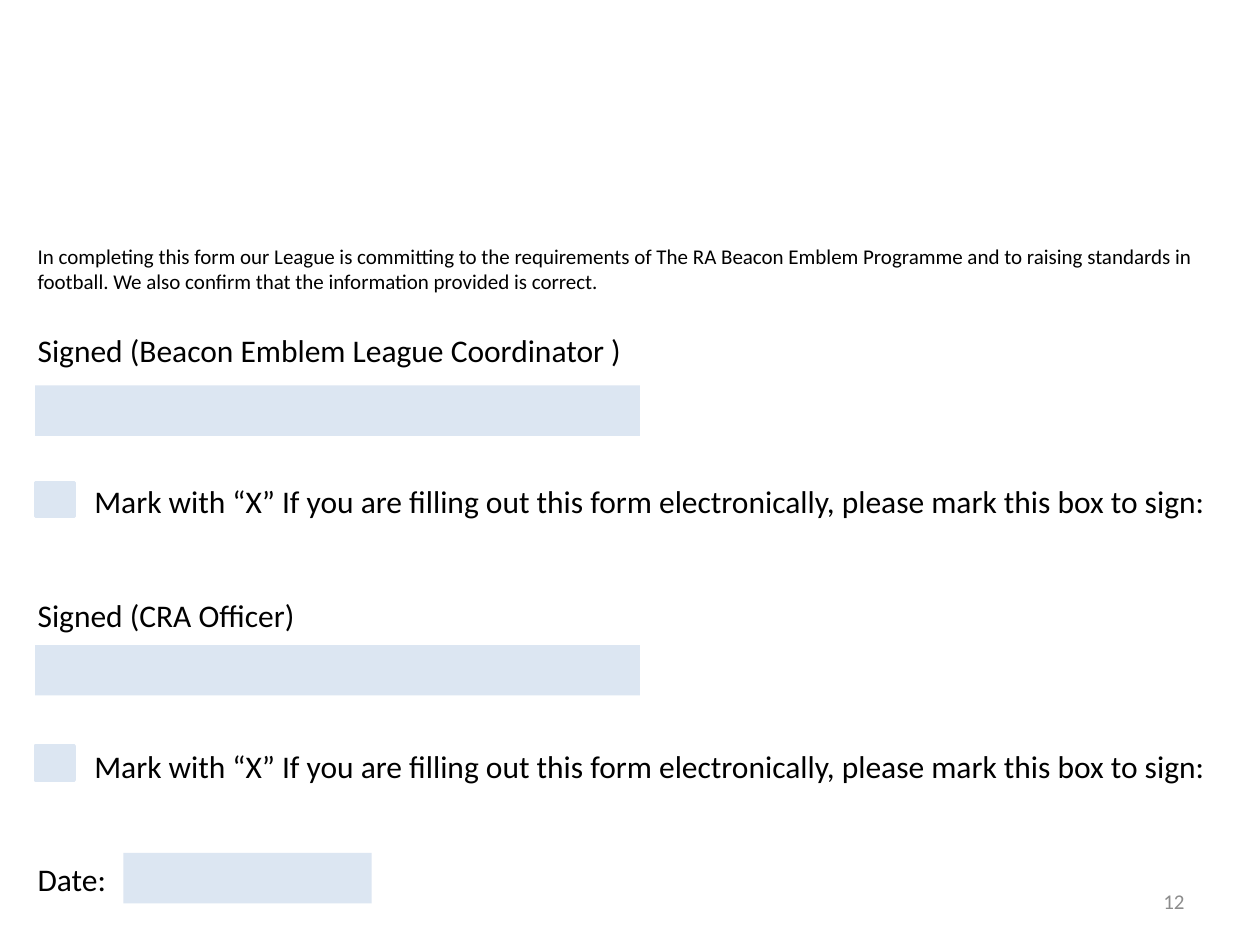
from pptx import Presentation
from pptx.dml.color import RGBColor
from pptx.enum.shapes import MSO_SHAPE
from pptx.enum.text import MSO_ANCHOR, PP_ALIGN
from pptx.util import Inches, Pt

RECT = MSO_SHAPE.RECTANGLE
MIDDLE = MSO_ANCHOR.MIDDLE
LEFT, RIGHT = PP_ALIGN.LEFT, PP_ALIGN.RIGHT
FIELD = RGBColor(0xDC, 0xE6, 0xF2)
BLACK = RGBColor(0, 0, 0)
GREY = RGBColor(0x8C, 0x8C, 0x8C)
FONT = "Calibri"

PLEDGE = ("In completing this form our League is committing to the requirements of "
          "The RA Beacon Emblem Programme and to raising standards in football. "
          "We also confirm that the information provided is correct.")
MARK = ("Mark with “X” If you are filling out this form electronically, "
        "please mark this box to sign:")

# text, size, blank lines above, left indent
LINES = [
    (PLEDGE, 12, 0, 0),
    ("Signed (Beacon Emblem League Coordinator )", 18, 1, 0),
    (MARK, 18, 3, 0.45),
    ("Signed (CRA Officer)", 18, 2, 0),
    (MARK, 18, 3, 0.45),
    ("Date:", 18, 2, 0),
]
LINE_PITCH = 21.6
MARGIN = 0.28
FIELD_H = 0.4
SIGNATURE_TOPS = (3.06, 5.12)
CHECKBOX_TOPS = (3.83, 5.92)
DATE_FIELD = (0.98, 6.77, 1.97, FIELD_H)


def add_text(s, box, lines, align=LEFT, color=BLACK):
    tf = s.shapes.add_textbox(*map(Inches, box)).text_frame
    tf.word_wrap = True
    for i, (text, size, blanks, indent) in enumerate(lines):
        p = tf.paragraphs[0] if i == 0 else tf.add_paragraph()
        p.text = text
        p.alignment = align
        p.space_before = Pt(blanks * LINE_PITCH)
        p.font.name, p.font.size = FONT, Pt(size)
        p.font.color.rgb = color
        if indent:
            p._p.get_or_add_pPr().set("marL", str(Inches(indent)))
    return tf


def add_field(s, box, outline=0):
    sp = s.shapes.add_shape(RECT, *map(Inches, box))
    sp.shadow.inherit = False
    sp.fill.solid()
    sp.fill.fore_color.rgb = FIELD
    if outline:
        sp.line.color.rgb = FIELD
        sp.line.width = Pt(outline)
    else:
        sp.line.fill.background()


prs = Presentation()
prs.slide_width, prs.slide_height = Inches(10), Inches(7.5)
s = prs.slides.add_slide(prs.slide_layouts[6])

tf = add_text(s, (7.17, 6.95, 2.33, 0.4), [("12", 12, 0, 0)], RIGHT, GREY)
tf.vertical_anchor = MIDDLE
add_text(s, (0.2, 1.88, 9.69, 5.35), LINES)

for signature_top, checkbox_top in zip(SIGNATURE_TOPS, CHECKBOX_TOPS):
    add_field(s, (MARGIN, signature_top, 4.8, FIELD_H))
    add_field(s, (MARGIN, checkbox_top, 0.31, 0.27), outline=2)
add_field(s, DATE_FIELD)

prs.save("out.pptx")
